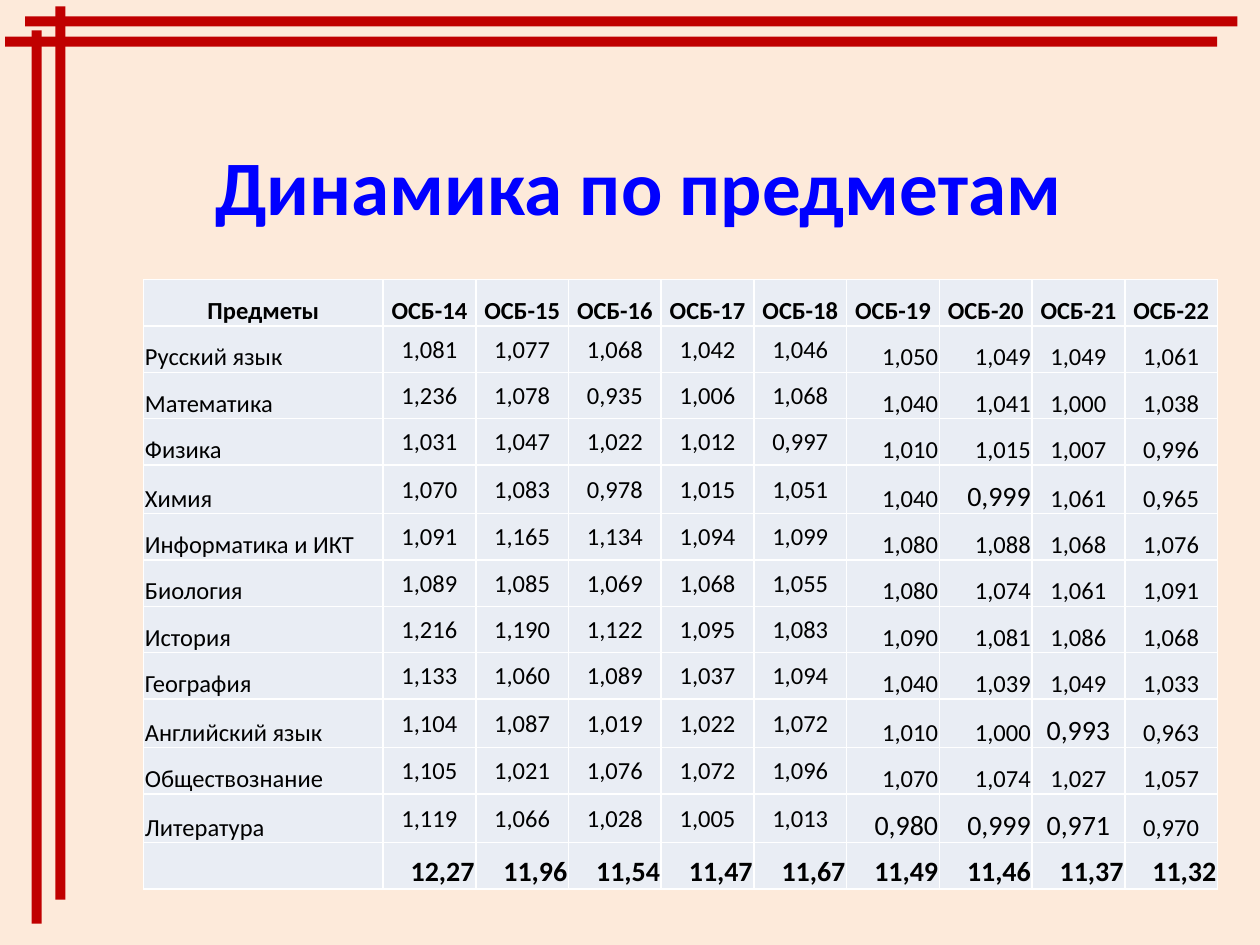
from lxml.etree import SubElement
from pptx import Presentation
from pptx.dml.color import RGBColor
from pptx.enum.shapes import MSO_SHAPE as Shape
from pptx.enum.text import MSO_ANCHOR as Anchor, PP_ALIGN as Align
from pptx.oxml.ns import qn
from pptx.util import Inches, Pt

UNIT = 0.1  # grid step in inches: 100 columns by 75 rows
COLUMNS, ROWS = 100, 75

HEADER = ["Предметы"] + [f"ОСБ-{year}" for year in range(14, 23)]
SCORES = {
    "Русский язык": "1,081 1,077 1,068 1,042 1,046 1,050 1,049 1,049 1,061",
    "Математика": "1,236 1,078 0,935 1,006 1,068 1,040 1,041 1,000 1,038",
    "Физика": "1,031 1,047 1,022 1,012 0,997 1,010 1,015 1,007 0,996",
    "Химия": "1,070 1,083 0,978 1,015 1,051 1,040 0,999 1,061 0,965",
    "Информатика и ИКТ": "1,091 1,165 1,134 1,094 1,099 1,080 1,088 1,068 1,076",
    "Биология": "1,089 1,085 1,069 1,068 1,055 1,080 1,074 1,061 1,091",
    "История": "1,216 1,190 1,122 1,095 1,083 1,090 1,081 1,086 1,068",
    "География": "1,133 1,060 1,089 1,037 1,094 1,040 1,039 1,049 1,033",
    "Английский язык": "1,104 1,087 1,019 1,022 1,072 1,010 1,000 0,993 0,963",
    "Обществознание": "1,105 1,021 1,076 1,072 1,096 1,070 1,074 1,027 1,057",
    "Литература": "1,119 1,066 1,028 1,005 1,013 0,980 0,999 0,971 0,970",
}
TOTALS = "12,27 11,96 11,54 11,47 11,67 11,49 11,46 11,37 11,32"
BODY = [[subject, *scores.split()] for subject, scores in SCORES.items()]
TABLE_ROWS = [HEADER, *BODY, ["", *TOTALS.split()]]


def color(value):
    return RGBColor.from_string(value)


def grid(steps):
    return Inches(steps * UNIT)


def is_enlarged(column, text):
    """Scores below one are set larger in the columns for 19 to 21."""
    return 6 <= column <= 8 and text.startswith("0,")


def cell_style(row, column, text):
    """Return alignment, anchor, size and boldness for a table cell."""
    if row == 0:
        return Align.CENTER, Anchor.BOTTOM, 14, True
    if row == len(TABLE_ROWS) - 1:
        return Align.RIGHT, Anchor.BOTTOM, 16, True
    size = 16 if is_enlarged(column, text) else 14
    if column == 0:
        return Align.LEFT, Anchor.BOTTOM, size, False
    align = Align.RIGHT if column in (6, 7) else Align.CENTER
    anchor = Anchor.MIDDLE if column <= 5 else Anchor.BOTTOM
    return align, anchor, size, False


class SlideBuilder:
    font = "Calibri"
    background = "FDEADA"
    bar_color = "C00000"
    title_color = "0000FF"
    text_color = "000000"
    cell_color = "E9EDF4"
    border_color = "FFFFFF"

    def __init__(self, slide):
        self.slide = slide
        fill = slide.background.fill
        fill.solid()
        fill.fore_color.rgb = color(self.background)

    def text_run(self, para, text, size, bold, font_color):
        span = para.add_run()
        span.text = text
        span.font.name = self.font
        span.font.size = Pt(size)
        span.font.bold = bold
        span.font.color.rgb = color(font_color)

    def bar(self, left, top, width, height):
        bar = self.slide.shapes.add_shape(
            Shape.RECTANGLE, *map(grid, (left, top, width, height)))
        bar.shadow.inherit = False
        bar.fill.solid()
        bar.fill.fore_color.rgb = color(self.bar_color)
        bar.line.fill.background()

    def title(self, text, left, top, width, height):
        box = self.slide.shapes.add_textbox(*map(grid, (left, top, width, height)))
        frame = box.text_frame
        frame.word_wrap = True
        frame.vertical_anchor = Anchor.MIDDLE
        self.text_run(frame.paragraphs[0], text, 44, True, self.title_color)

    def border(self, cell):
        properties = cell._tc.get_or_add_tcPr()
        for side in ("lnL", "lnR", "lnT", "lnB"):
            line = SubElement(properties, qn(f"a:{side}"), w=str(Pt(1)))
            fill = SubElement(line, qn("a:solidFill"))
            SubElement(fill, qn("a:srgbClr"), val=self.border_color)

    def cell(self, cell, text, align, anchor, size, bold):
        self.border(cell)
        cell.fill.solid()
        cell.fill.fore_color.rgb = color(self.cell_color)
        cell.margin_left = cell.margin_right = cell.margin_top = Inches(0.01)
        cell.margin_bottom = 0
        cell.vertical_anchor = anchor
        para = cell.text_frame.paragraphs[0]
        para.alignment = align
        if text:
            self.text_run(para, text, size, bold, self.text_color)

    def table(self, rows, left, top, widths, heights):
        frame = self.slide.shapes.add_table(
            len(rows), len(widths),
            *map(grid, (left, top, sum(widths), sum(heights))))
        table = frame.table
        table.first_row = table.horz_banding = False
        for column, width in zip(table.columns, widths):
            column.width = grid(width)
        for row, height in zip(table.rows, heights):
            row.height = grid(height)
        for row, texts in enumerate(rows):
            for column, text in enumerate(texts):
                self.cell(table.cell(row, column), text,
                          *cell_style(row, column, text))


def main():
    deck = Presentation()
    deck.slide_width, deck.slide_height = grid(COLUMNS), grid(ROWS)
    builder = SlideBuilder(deck.slides.add_slide(deck.slide_layouts[6]))

    thickness, across, down = 0.8, 96.2, 70.9
    builder.bar(2, 1.3, across, thickness)
    builder.bar(2.5, 2.4, thickness, down)
    builder.bar(0.4, 2.9, across, thickness)
    builder.bar(4.4, 0.5, thickness, down)

    builder.title("Динамика по предметам", 16.1, 8.4, 75.6, 12.5)

    widths = [19] + [7.36] * 9
    heights = [3.86 if any(is_enlarged(*item) for item in enumerate(texts)) else 3.68
               for texts in TABLE_ROWS]
    builder.table(TABLE_ROWS, 11.4, 22.2, widths, heights)
    deck.save("out.pptx")


if __name__ == "__main__":
    main()
